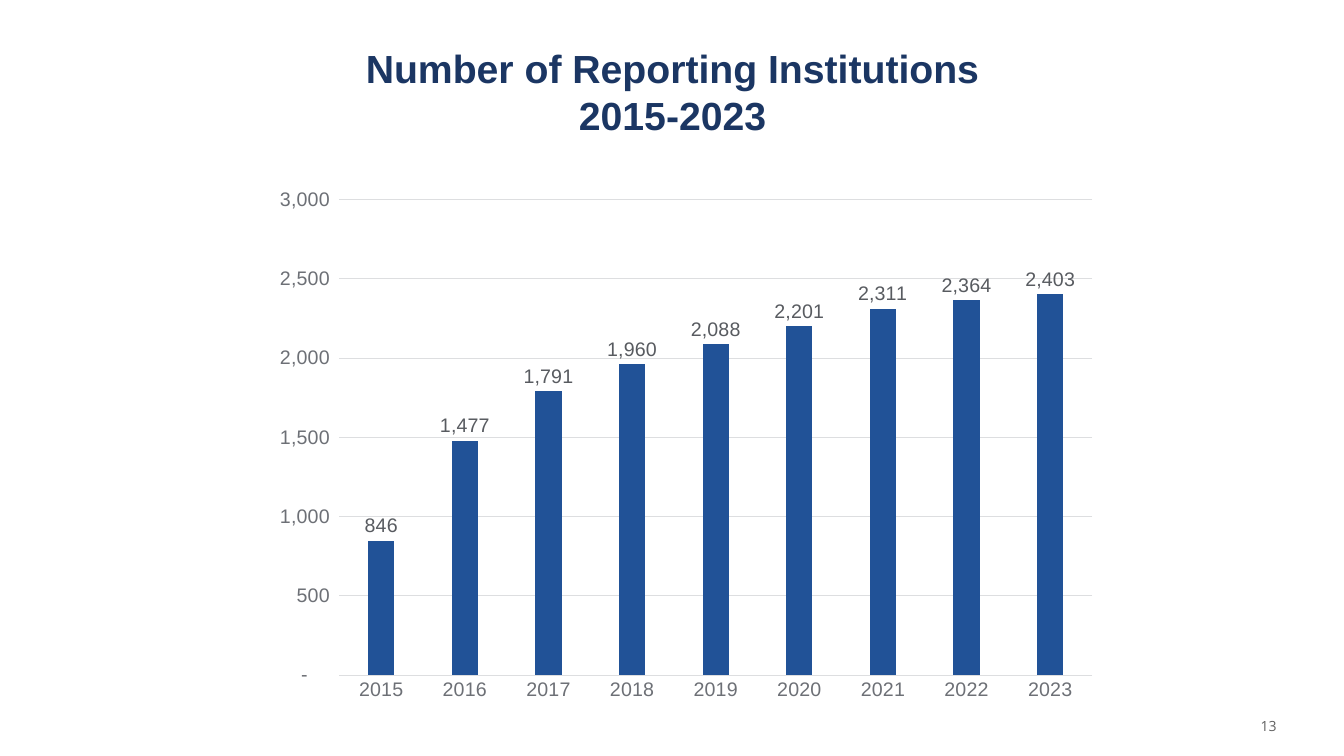
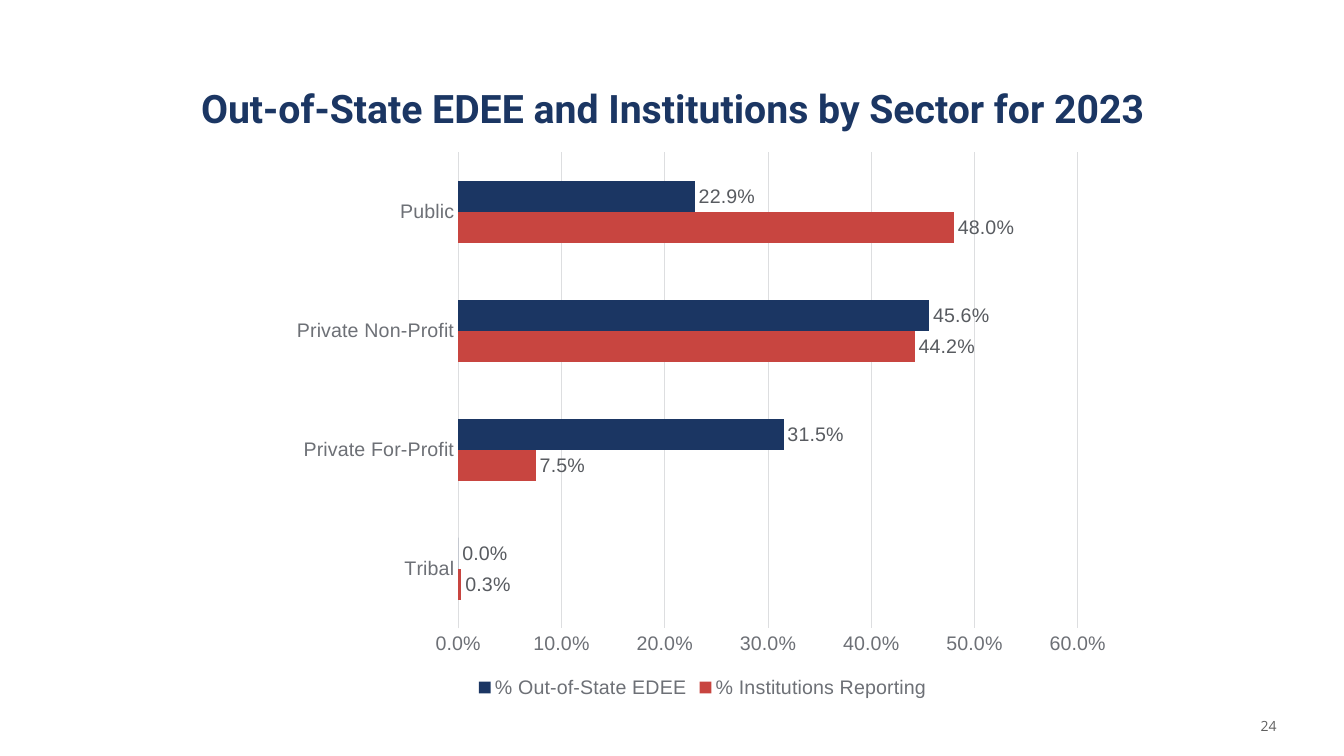
from lxml.etree import fromstring
from pptx import Presentation
from pptx.chart.data import CategoryChartData
from pptx.dml.color import RGBColor
from pptx.enum.chart import XL_CHART_TYPE, XL_LABEL_POSITION, XL_LEGEND_POSITION, XL_TICK_MARK
from pptx.enum.text import MSO_ANCHOR, MSO_AUTO_SIZE, PP_ALIGN
from pptx.util import Pt

PX = 9144  # 100 px to the inch
NAVY, BLUE, RED = "1B3663", "215297", "C84540"
AXIS_GREY, LABEL_GREY, RULE_GREY, NUMBER_GREY = "6D7076", "585B60", "DDDEE0", "606060"
CHART_NS = "http://schemas.openxmlformats.org/drawingml/2006/chart"


def color(hex_string):
    return RGBColor.from_string(hex_string)


def write(shape, text, box, font, size, ink, align, anchor, bold=False, line_height=None):
    shape.left, shape.top, shape.width, shape.height = [n * PX for n in box]
    frame = shape.text_frame
    frame.word_wrap = True
    frame.auto_size = MSO_AUTO_SIZE.NONE
    frame.vertical_anchor = anchor
    frame.margin_left = frame.margin_right = 10 * PX
    frame.margin_top = frame.margin_bottom = 5 * PX
    frame.text = text
    for paragraph in frame.paragraphs:
        paragraph.alignment = align
        paragraph.space_before = Pt(0)
        if line_height:
            paragraph.line_spacing = Pt(line_height)
        for run in paragraph.runs:
            run.font.name, run.font.size, run.font.bold = font, Pt(size), bold
            run.font.color.rgb = color(ink)


slides = [
    dict(
        number="13", title="Number of Reporting Institutions\n2015-2023",
        title_font="Arial", title_box=(296, 38, 742, 104),
        kind=XL_CHART_TYPE.COLUMN_CLUSTERED, chart_box=(249, 187, 835, 526),
        plot=(0.105, 0.021, 0.894, 0.897), gap=219, overlap=-27,
        top=3000, step=500, legend=False, label_format="#,##0",
        axis_format='_(* #,##0_);_(* \\(#,##0\\);_(* "-"??_);_(@_)',
        categories=[str(year) for year in range(2015, 2024)],
        series=[("Series 1", BLUE, [846, 1477, 1791, 1960, 2088, 2201, 2311, 2364, 2403])],
    ),
    dict(
        number="24", title="Out-of-State EDEE and Institutions by Sector for 2023",
        title_font="Roboto", title_box=(183, 78, 968, 57),
        kind=XL_CHART_TYPE.BAR_CLUSTERED, chart_box=(279, 140, 836, 557),
        plot=(0.21, 0.02, 0.735, 0.848), gap=182, overlap=0,
        top=0.6, step=0.1, legend=True, label_format="0.0%", axis_format="0.0%",
        categories=["Tribal", "Private For-Profit", "Private Non-Profit", "Public"],
        series=[
            ("% Institutions Reporting", RED, [0.003, 0.075, 0.442, 0.48]),
            ("% Out-of-State EDEE", NAVY, [0, 0.315, 0.456, 0.229]),
        ],
    ),
]

deck = Presentation()
deck.slide_width, deck.slide_height = 1333 * PX, 750 * PX

for content in slides:
    slide = deck.slides.add_slide(deck.slide_layouts[5])

    # Title and slide number
    write(slide.shapes.title, content["title"], content["title_box"],
          font=content["title_font"], size=28, ink=NAVY, bold=True,
          align=PP_ALIGN.CENTER, anchor=MSO_ANCHOR.TOP, line_height=34)
    write(slide.shapes.add_textbox(0, 0, 0, 0), content["number"], (976, 705, 300, 30),
          font="Open Sans", size=10, ink=NUMBER_GREY,
          align=PP_ALIGN.RIGHT, anchor=MSO_ANCHOR.MIDDLE)

    # Chart with its data
    data = CategoryChartData(number_format=content["label_format"])
    data.categories = content["categories"]
    for name, _, values in content["series"]:
        data.add_series(name, values)
    chart_box = [n * PX for n in content["chart_box"]]
    chart = slide.shapes.add_chart(content["kind"], *chart_box, data).chart
    chart.has_title = False
    chart.has_legend = content["legend"]
    chart.font.name, chart.font.size = "Arial", Pt(14)

    # Axes and gridlines
    sectors, scale = chart.category_axis, chart.value_axis
    scale.minimum_scale, scale.maximum_scale = 0, content["top"]
    scale.major_unit = content["step"]
    scale.has_major_gridlines = True
    scale.tick_labels.number_format = content["axis_format"]
    scale.tick_labels.number_format_is_linked = False
    scale.format.line.fill.background()
    for line in (sectors.format.line, scale.major_gridlines.format.line):
        line.color.rgb = color(RULE_GREY)
        line.width = Pt(0.75)
    grey_fonts = [(sectors.tick_labels.font, AXIS_GREY), (scale.tick_labels.font, AXIS_GREY)]
    for axis in (sectors, scale):
        axis.major_tick_mark = axis.minor_tick_mark = XL_TICK_MARK.NONE

    # Legend
    if content["legend"]:
        chart.legend.position = XL_LEGEND_POSITION.BOTTOM
        chart.legend.include_in_layout = False
        grey_fonts.append((chart.legend.font, AXIS_GREY))

    # Bars and value labels
    bars = chart.plots[0]
    bars.vary_by_categories = False
    bars.gap_width, bars.overlap = content["gap"], content["overlap"]
    for series, (_, fill, _) in zip(bars.series, content["series"]):
        series.format.fill.solid()
        series.format.fill.fore_color.rgb = color(fill)
        series.invert_if_negative = False
        labels = series.data_labels
        labels.show_value = True
        labels.position = XL_LABEL_POSITION.OUTSIDE_END
        labels.number_format = content["label_format"]
        labels.number_format_is_linked = False
        grey_fonts.append((labels.font, LABEL_GREY))
    for font, ink in grey_fonts:
        font.name, font.size = "Arial", Pt(14)
        font.color.rgb = color(ink)

    # Fixed inner plot area
    plot_area = chart.plots[0]._element.getparent()
    for old_layout in plot_area.findall(f"{{{CHART_NS}}}layout"):
        plot_area.remove(old_layout)
    settings = '<c:layoutTarget val="inner"/><c:xMode val="edge"/><c:yMode val="edge"/>'
    settings += "".join(f'<c:{key} val="{part}"/>' for key, part in zip("xywh", content["plot"]))
    plot_area.insert(0, fromstring(
        f'<c:layout xmlns:c="{CHART_NS}"><c:manualLayout>{settings}</c:manualLayout></c:layout>'))

deck.save("out.pptx")
